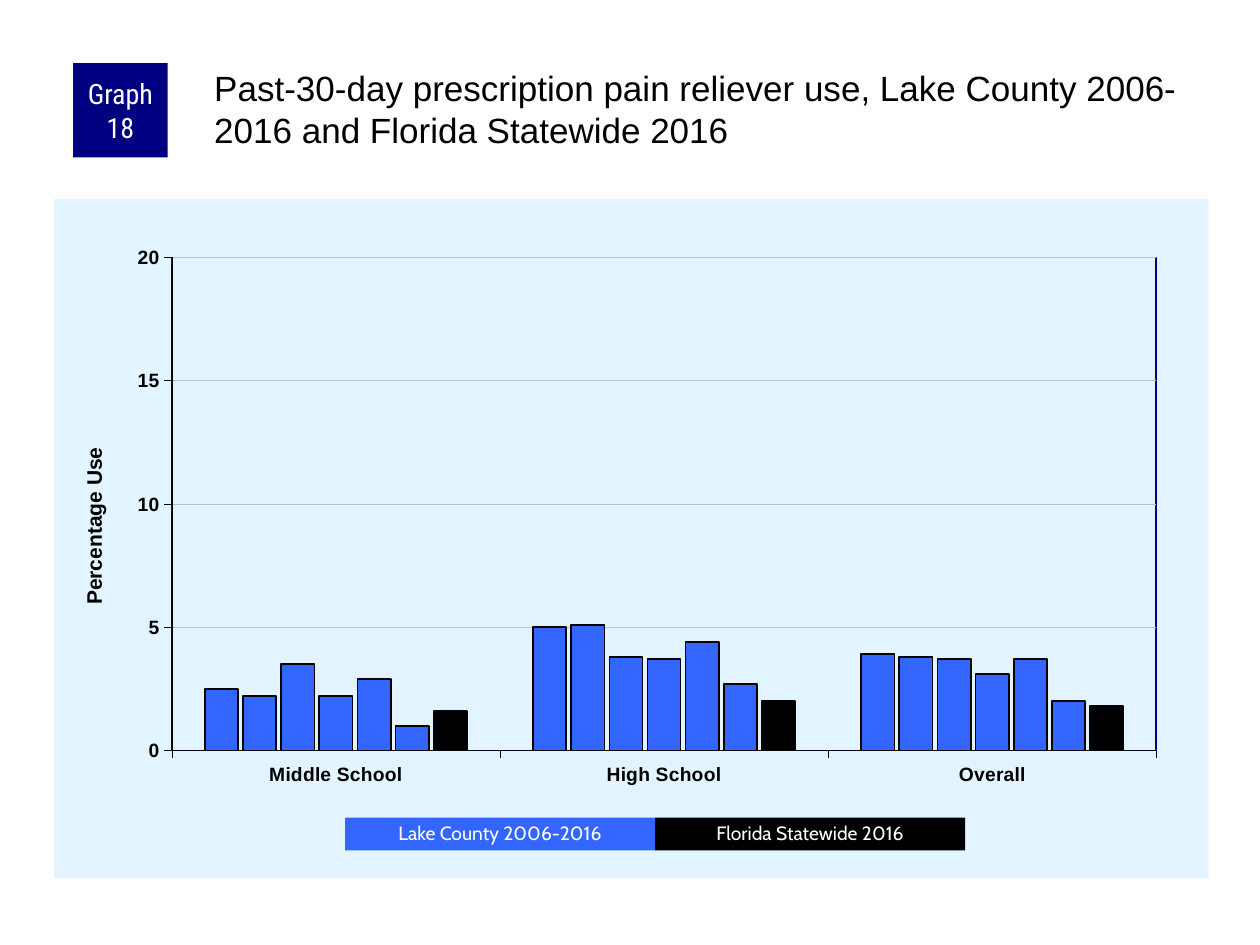
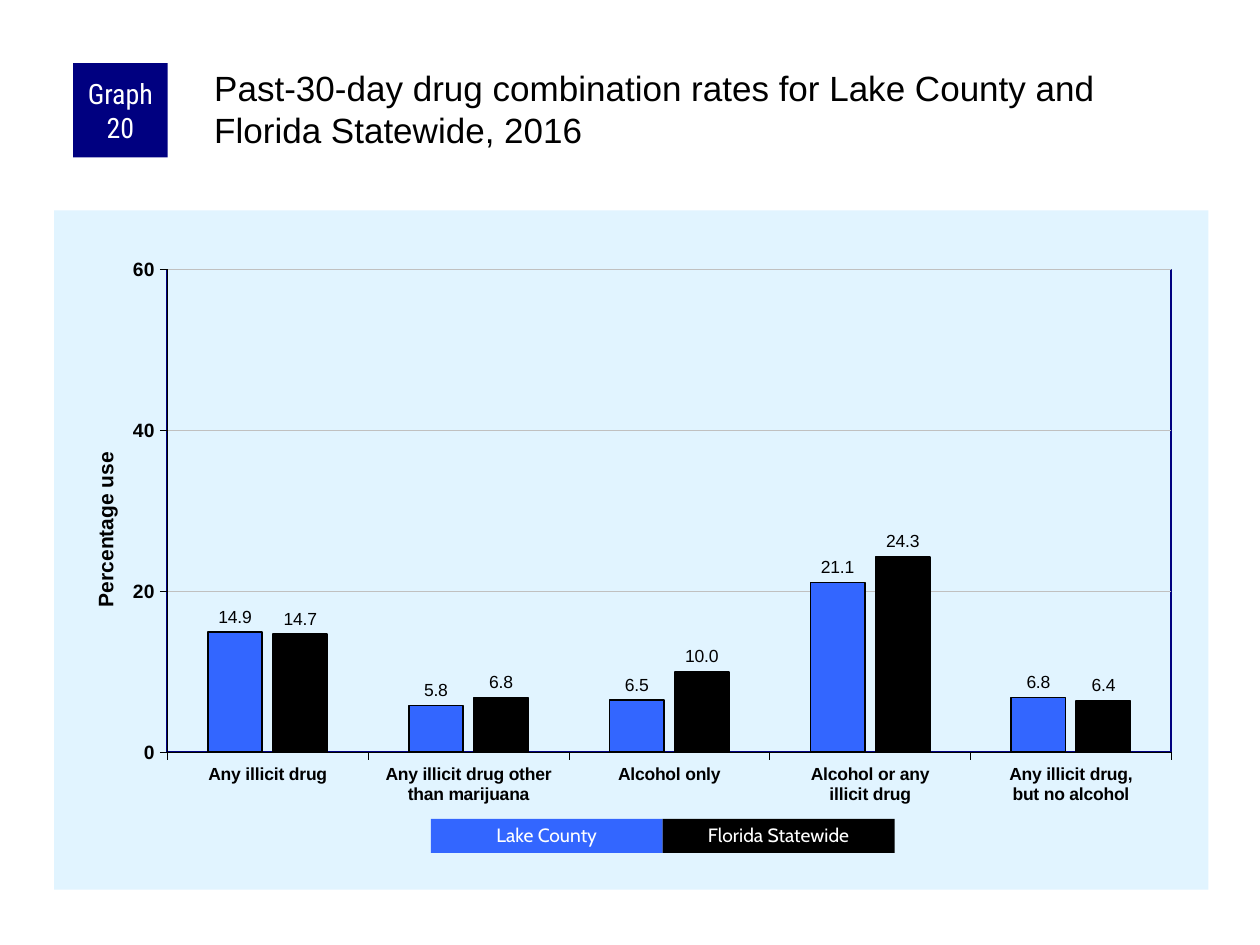
from dataclasses import dataclass

from lxml import etree
from pptx import Presentation
from pptx import util as u
from pptx.chart import data
from pptx.dml.color import RGBColor
from pptx.enum import chart as ch, shapes, text
from pptx.oxml import ns


@dataclass(frozen=True)
class Theme:
    """Colours, fonts and type sizes shared by the slides."""
    navy: str = "000080"
    blue: str = "3366FF"
    black: str = "000000"
    white: str = "FFFFFF"
    panel: str = "E1F4FF"
    grid: str = "C0C0C0"
    body: str = "Arial"
    badge: str = "Roboto Condensed"
    legend: str = "Cabin"
    title_size: float = 20
    badge_size: float = 16
    axis_title_size: float = 12
    axis_size: float = 11
    label_size: float = 10


def apply(obj, **values):
    """Set each named attribute on an object."""
    for name, value in values.items():
        setattr(obj, name, value)


def set_font(font, name, size, color, bold=False):
    """Style a font."""
    apply(font, name=name, size=u.Pt(size), bold=bold)
    font.color.rgb = RGBColor.from_string(color)


def set_line(line, color, width):
    """Style an outline."""
    line.color.rgb = RGBColor.from_string(color)
    line.width = u.Pt(width)


def add_layout(parent, index, **places):
    """Give a chart part a manual layout."""
    for old in parent.findall(ns.qn("c:layout")):
        parent.remove(old)
    layout = etree.Element(ns.qn("c:layout"))
    parent.insert(index, layout)
    manual = etree.SubElement(layout, ns.qn("c:manualLayout"))
    for tag, value in places.items():
        etree.SubElement(manual, ns.qn(f"c:{tag}")).set("val", str(value))


def paint(fill, line=None, width=1):
    """Make chart shape properties with a fill and an optional line."""
    props = etree.Element(ns.qn("c:spPr"))

    def solid(parent, color):
        part = etree.SubElement(parent, ns.qn("a:solidFill"))
        etree.SubElement(part, ns.qn("a:srgbClr")).set("val", color)

    if fill:
        solid(props, fill)
    else:
        etree.SubElement(props, ns.qn("a:noFill"))
    ln = etree.SubElement(props, ns.qn("a:ln"))
    if line:
        ln.set("w", str(u.Pt(width)))
        solid(ln, line)
    else:
        etree.SubElement(ln, ns.qn("a:noFill"))
    return props


class Deck:
    """Holds the theme and the current slide."""

    def __init__(self, theme):
        self.t = theme
        self.prs = Presentation()
        apply(self.prs, slide_width=u.Inches(10), slide_height=u.Inches(7.5))

    def new_slide(self):
        """Start a blank slide."""
        self.s = self.prs.slides.add_slide(self.prs.slide_layouts[6])

    def put_text(self, sp, words, font, insets, align, **para):
        """Put one styled paragraph in a shape."""
        tf = sp.text_frame
        sides = ("margin_left", "margin_top", "margin_right", "margin_bottom")
        apply(tf, word_wrap=True, **dict(zip(sides, map(u.Inches, insets))))
        p = tf.paragraphs[0]
        apply(p, alignment=align, **para)
        r = p.add_run()
        r.text = words
        set_font(r.font, *font)
        return tf

    def box(self, place, color, words, font, insets, **para):
        """Add a filled rectangle with centred text."""
        sp = self.s.shapes.add_shape(shapes.MSO_SHAPE.RECTANGLE, *map(u.Inches, place))
        sp.shadow.inherit = False
        sp.fill.solid()
        sp.fill.fore_color.rgb = RGBColor.from_string(color)
        sp.line.fill.background()
        tf = self.put_text(sp, words, font, insets, text.PP_ALIGN.CENTER, **para)
        tf.vertical_anchor = text.MSO_ANCHOR.MIDDLE

    def heading(self, number, title):
        """Add the numbered badge and the title."""
        t = self.t
        self.box((0.58, 0.5, 0.75, 0.75), t.navy, f"Graph {number}",
                 (t.badge, t.badge_size, t.white), (0.05, 0, 0.05, 0))
        sp = self.s.shapes.add_textbox(*map(u.Inches, (1.67, 0.5, 7.92, 0.83)))
        self.put_text(sp, title, (t.body, t.title_size, t.black),
                      (0.03, 0.03, 0, 0), text.PP_ALIGN.LEFT)

    def legend(self, left, top, width, height, names):
        """Add a row of touching legend boxes."""
        t = self.t
        for i, (name, color) in enumerate(zip(names, (t.blue, t.black))):
            self.box((left + i * width, top, width, height), color, name,
                     (t.legend, t.axis_size, t.white), (0.1, 0.05, 0.1, 0.05),
                     line_spacing=0.9)

    def columns(self, top, cats, rows, axis_title, title_at, scale, gap, overlap,
                plot_at, cat_size, labels=False):
        """Add a clustered column chart whose last series is the state."""
        t = self.t
        cd = data.CategoryChartData()
        cd.categories = cats
        for i, row in enumerate(rows, 1):
            cd.add_series(f"Series {i}", row)
        place = map(u.Inches, (0.43, top, 9.16, 5.39))
        chart = self.s.shapes.add_chart(ch.XL_CHART_TYPE.COLUMN_CLUSTERED, *place, cd).chart
        apply(chart, has_legend=False, has_title=False)
        set_font(chart.font, t.body, t.label_size, t.black)

        plot = chart.plots[0]
        apply(plot, gap_width=gap, overlap=overlap, vary_by_categories=False)
        for i, series in enumerate(plot.series, 1):
            series.invert_if_negative = False
            series.format.fill.solid()
            color = t.black if i == len(rows) else t.blue
            series.format.fill.fore_color.rgb = RGBColor.from_string(color)
            set_line(series.format.line, t.black, 1)
        if labels:
            plot.has_data_labels = True
            apply(plot.data_labels, show_value=True, number_format="0.0",
                  number_format_is_linked=False, position=ch.XL_LABEL_POSITION.OUTSIDE_END)
            set_font(plot.data_labels.font, t.body, t.label_size, t.black)

        cat_axis, val_axis = chart.category_axis, chart.value_axis
        for axis, size in ((cat_axis, cat_size), (val_axis, t.axis_size)):
            apply(axis, major_tick_mark=ch.XL_TICK_MARK.OUTSIDE,
                  minor_tick_mark=ch.XL_TICK_MARK.NONE)
            set_font(axis.tick_labels.font, t.body, size, t.black, True)
            set_line(axis.format.line, t.black, 0.25)
        apply(val_axis, minimum_scale=0, maximum_scale=scale[0], major_unit=scale[1],
              has_major_gridlines=True)
        set_line(val_axis.major_gridlines.format.line, t.grid, 0.25)
        title = val_axis.axis_title
        tf = title.text_frame
        tf._txBody.bodyPr.set("rot", "-5400000")
        r = tf.paragraphs[0].add_run()
        r.text = axis_title
        set_font(r.font, t.body, t.axis_title_size, t.black, True)
        add_layout(title._element, 1, xMode="edge", yMode="edge",
                   x=title_at[0], y=title_at[1])

        area = chart._chartSpace.chart.plotArea
        add_layout(area, 0, layoutTarget="inner", xMode="edge", yMode="edge",
                   **dict(zip("xywh", plot_at)))
        area.append(paint(None, t.navy))
        chart._chartSpace.chart.addnext(paint(t.panel))


def main():
    """Build both graph slides."""
    deck = Deck(Theme())

    deck.new_slide()
    deck.columns(
        1.58, ["Middle School", "High School", "Overall"],
        [(2.5, 5, 3.9), (2.2, 5.1, 3.8), (3.5, 3.8, 3.7), (2.2, 3.7, 3.1),
         (2.9, 4.4, 3.7), (1, 2.7, 2), (1.6, 2, 1.8)],
        "Percentage Use", (0.02, 0.36), (20, 5), 200, -15,
        (0.102, 0.086, 0.853, 0.726), deck.t.axis_size)
    deck.heading(18, "Past-30-day prescription pain reliever use, Lake County "
                     "2006-2016 and Florida Statewide 2016")
    deck.legend(2.74, 6.49, 2.46, 0.26, ["Lake County 2006-2016", "Florida Statewide 2016"])

    deck.new_slide()
    deck.columns(
        1.67, ["Any illicit drug", "Any illicit drug other than marijuana", "Alcohol only",
               "Alcohol or any\nillicit drug", "Any illicit drug,\nbut no alcohol"],
        [(14.9, 5.8, 6.5, 21.1, 6.8), (14.7, 6.8, 10, 24.3, 6.4)],
        "Percentage use", (0.03, 0.35), (60, 20), 150, -20,
        (0.098, 0.087, 0.87, 0.711), deck.t.label_size, labels=True)
    deck.heading(20, "Past-30-day drug combination rates for Lake County and "
                     "Florida Statewide, 2016")
    deck.legend(3.42, 6.5, 1.84, 0.27, ["Lake County", "Florida Statewide"])

    deck.prs.save("out.pptx")


if __name__ == "__main__":
    main()
